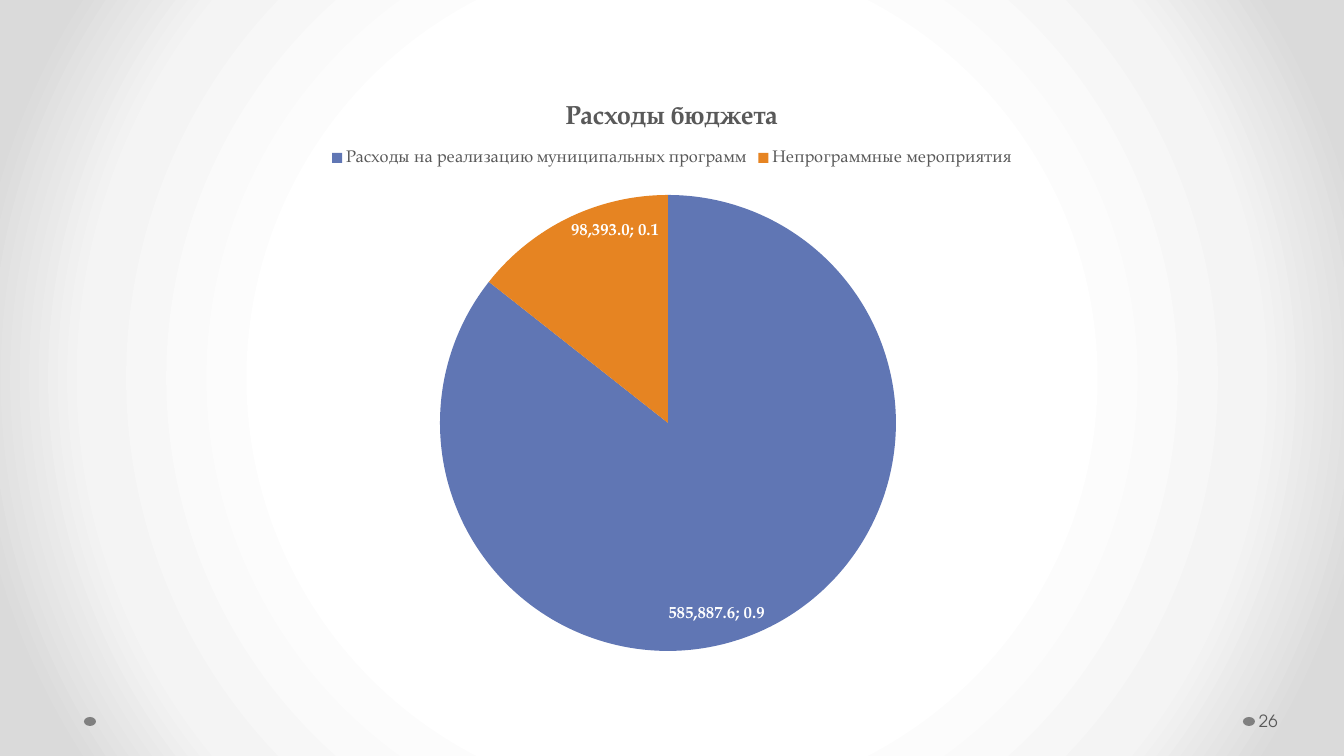
from lxml import etree
from pptx import Presentation
from pptx.chart.data import CategoryChartData
from pptx.dml.color import RGBColor
from pptx.enum.chart import XL_CHART_TYPE, XL_LABEL_POSITION, XL_LEGEND_POSITION
from pptx.enum.shapes import MSO_SHAPE
from pptx.enum.text import MSO_ANCHOR
from pptx.oxml.ns import qn
from pptx.util import Emu, Pt

PIE = XL_CHART_TYPE.PIE
INSIDE_END = XL_LABEL_POSITION.INSIDE_END
TOP = XL_LEGEND_POSITION.TOP
OVAL = MSO_SHAPE.OVAL
MIDDLE = MSO_ANCHOR.MIDDLE

# Content
TITLE = "Расходы бюджета"
EXPENSES = [
    ("Расходы на реализацию муниципальных программ", 585887.6, "programs"),
    ("Непрограммные мероприятия", 98393.0, "other"),
]
PAGE_NUMBER = "26"
BODY_FONT, NUMBER_FONT = "TeX Gyre Pagella", "TeX Gyre Adventor"
COLORS = {
    "programs": "6076B4", "other": "E68422", "text": "595959",
    "label": "FFFFFF", "dot": "808080",
    "center": "FFFFFF", "ring": "F4F4F4", "edge": "DADADA",
}
BACKGROUND_STOPS = [(50, "center"), (76, "ring"), (92, "edge")]

# Places in px: left, top, width, height
PX = 914400 / 100.8
SLIDE_SIZE = (1344, 756)
CHART_BOX = (224, 80, 896, 598)
PIE_BOX = (440, 195, 456, 456)
NUMBER_BOX = (1256, 701, 83, 40)
DOT_LEFTS, DOT_TOP, DOT_SIZE = (84, 1243), 717, (12, 9)


def px(*lengths):
    return [Emu(round(length * PX)) for length in lengths]


def color(name):
    return RGBColor.from_string(COLORS[name])


def style_font(font, size, color_name="text", bold=False, name=BODY_FONT):
    font.size, font.bold, font.name = Pt(size), bold, name
    font.color.rgb = color(color_name)


def add_text(slide, text, box, **font_format):
    frame = slide.shapes.add_textbox(*px(*box)).text_frame
    frame.word_wrap = True
    frame.vertical_anchor = MIDDLE
    frame.margin_left, frame.margin_right, frame.margin_top, frame.margin_bottom = px(3, 5, 5, 5)
    run = frame.paragraphs[0].add_run()
    run.text = text
    style_font(run.font, **font_format)


def paint_background(slide):
    fill = slide.background.fill
    fill.gradient()
    gradient = slide.background._cSld.find(".//" + qn("a:gradFill"))
    for child in list(gradient):
        gradient.remove(child)
    stops = etree.SubElement(gradient, qn("a:gsLst"))
    for position, name in BACKGROUND_STOPS:
        stop = etree.SubElement(stops, qn("a:gs"), pos=str(position * 1000))
        etree.SubElement(stop, qn("a:srgbClr"), val=COLORS[name])
    circle = etree.SubElement(gradient, qn("a:path"), path="circle")
    etree.SubElement(circle, qn("a:fillToRect"), dict.fromkeys("ltrb", "50000"))


def place_pie(chart):
    area = chart._chartSpace.chart.plotArea
    for old in area.findall(qn("c:layout")):
        area.remove(old)
    layout = etree.Element(qn("c:layout"))
    area.insert(0, layout)
    manual = etree.SubElement(layout, qn("c:manualLayout"))
    left, top, width, height = CHART_BOX
    pie_left, pie_top, pie_width, pie_height = PIE_BOX
    settings = [
        ("layoutTarget", "inner"), ("xMode", "edge"), ("yMode", "edge"),
        ("x", (pie_left - left) / width), ("y", (pie_top - top) / height),
        ("w", pie_width / width), ("h", pie_height / height),
    ]
    for tag, value in settings:
        etree.SubElement(manual, qn("c:" + tag), val=str(value))


def add_expense_pie(slide):
    data = CategoryChartData(number_format="#,##0.0")
    data.categories = [category for category, _, _ in EXPENSES]
    data.add_series(TITLE, [value for _, value, _ in EXPENSES])
    chart = slide.shapes.add_chart(PIE, *px(*CHART_BOX), data).chart
    chart.font.name, chart.font.size = BODY_FONT, Pt(10)

    # Title and legend
    chart.has_title = True
    title = chart.chart_title
    title.include_in_layout = False
    title.text_frame.text = TITLE
    style_font(title.text_frame.paragraphs[0].runs[0].font, 18.6, bold=True)
    chart.has_legend = True
    chart.legend.position = TOP
    chart.legend.include_in_layout = False
    style_font(chart.legend.font, 12)

    # Slices and labels
    plot = chart.plots[0]
    plot.vary_by_categories = True
    for index, (_, _, name) in enumerate(EXPENSES):
        fill = plot.series[0].points[index].format.fill
        fill.solid()
        fill.fore_color.rgb = color(name)
    labels = plot.series[0].data_labels
    labels.show_value = labels.show_percentage = True
    labels.number_format, labels.number_format_is_linked = "#,##0.0", False
    labels.position = INSIDE_END
    style_font(labels.font, 12, "label", bold=True)
    separator = etree.Element(qn("c:separator"))
    separator.text = "; "
    labels._element.find(qn("c:showBubbleSize")).addnext(separator)
    place_pie(chart)


def main():
    presentation = Presentation()
    presentation.slide_width, presentation.slide_height = px(*SLIDE_SIZE)
    slide = presentation.slides.add_slide(presentation.slide_layouts[6])
    paint_background(slide)

    # Footer dots and page number
    for left in DOT_LEFTS:
        dot = slide.shapes.add_shape(OVAL, *px(left, DOT_TOP, *DOT_SIZE))
        dot.shadow.inherit = False
        dot.fill.solid()
        dot.fill.fore_color.rgb = color("dot")
        dot.line.fill.background()
    add_text(slide, PAGE_NUMBER, NUMBER_BOX, size=12, name=NUMBER_FONT)

    add_expense_pie(slide)
    presentation.save("out.pptx")


if __name__ == "__main__":
    main()
